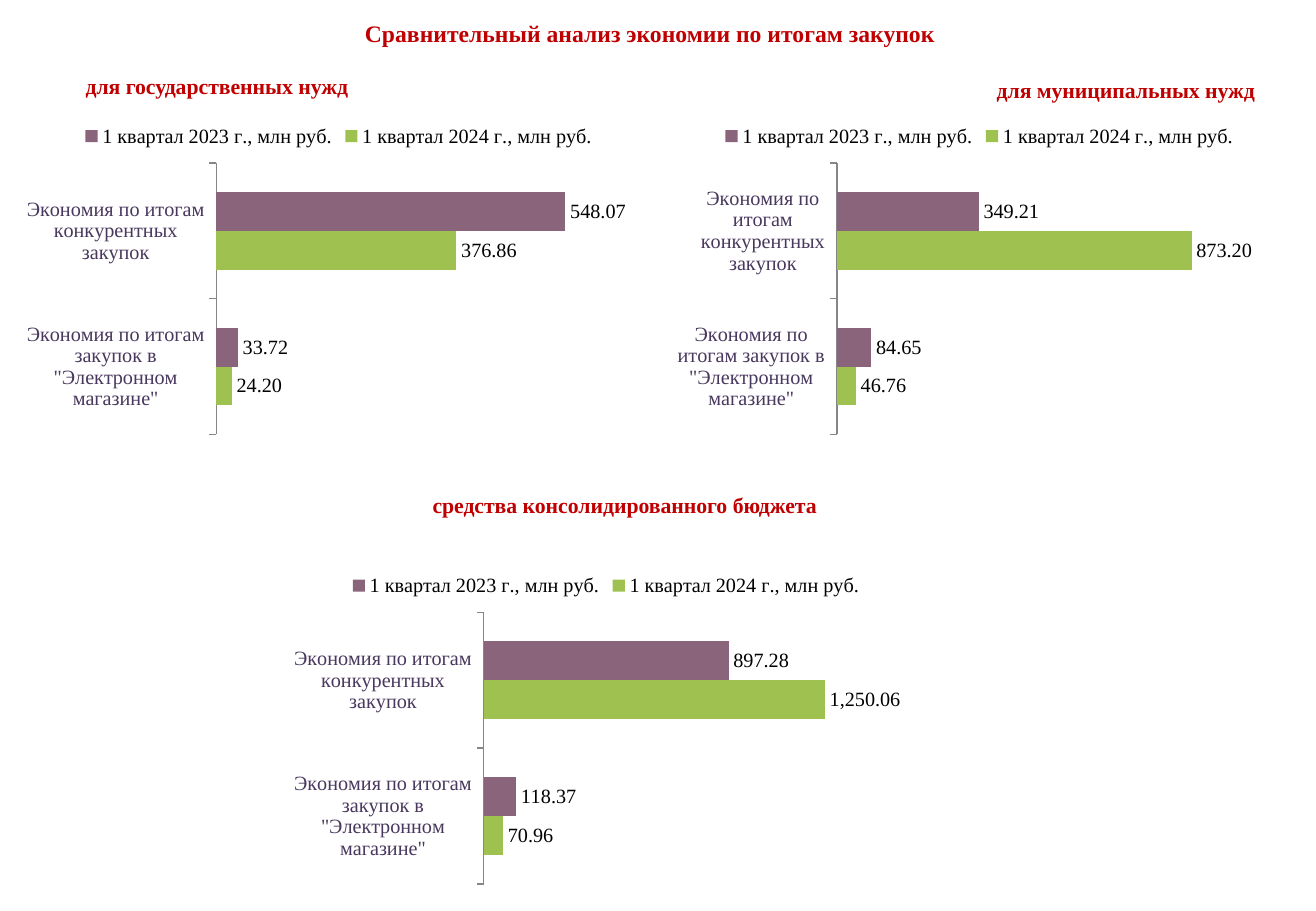
from pptx import Presentation
from pptx.chart.data import CategoryChartData
from pptx.dml.color import RGBColor
from pptx.enum.chart import (XL_CHART_TYPE, XL_LABEL_POSITION,
                             XL_LEGEND_POSITION, XL_TICK_MARK)
from pptx.enum.text import MSO_ANCHOR, PP_ALIGN
from pptx.oxml import parse_xml
from pptx.oxml.ns import nsdecls
from pptx.util import Pt

BAR = XL_CHART_TYPE.BAR_CLUSTERED
OUTSIDE_END = XL_LABEL_POSITION.OUTSIDE_END
LEGEND_TOP = XL_LEGEND_POSITION.TOP
TICK_OUT, TICK_NONE = XL_TICK_MARK.OUTSIDE, XL_TICK_MARK.NONE
CENTER, MIDDLE = PP_ALIGN.CENTER, MSO_ANCHOR.MIDDLE

PX = 9144  # 100 px to the inch
SLIDE = (1083, 750)
FONT = "Times New Roman"
RED, BLACK, VIOLET, GREY = "C00000", "000000", "49385E", "868686"
NUMBER_FORMAT = "#,##0.00"
CHART_SIZE = (512, 295)
PLOT_TOP, PLOT_HEIGHT = 0.143, 0.758

TITLE = ("Сравнительный анализ экономии по итогам закупок", (35, 3, 1000, 49))
CATEGORIES = ['Экономия по итогам закупок в "Электронном магазине"',
              "Экономия по итогам конкурентных закупок"]
SERIES = [("1 квартал 2024 г., млн руб.", "9EC14F"),
          ("1 квартал 2023 г., млн руб.", "8A647B")]
PANELS = [
    dict(heading="для государственных нужд", heading_box=(22, 56, 313, 30),
         chart_at=(22, 92), plot_x=(0.303, 0.616), axis_max=600,
         values=[(24.20, 376.86), (33.72, 548.07)]),
    dict(heading="для муниципальных нужд", heading_box=(770, 59, 313, 30),
         chart_at=(550, 92), plot_x=(0.271, 0.653), axis_max=1000,
         values=[(46.76, 873.20), (84.65, 349.21)]),
    dict(heading="средства консолидированного бюджета",
         heading_box=(258, 401, 512, 30),
         chart_at=(242, 462), plot_x=(0.303, 0.616), axis_max=1400,
         values=[(70.96, 1250.06), (118.37, 897.28)]),
]


def emu(lengths):
    return [n * PX for n in lengths]


def rgb(color):
    return RGBColor.from_string(color)


def style_font(font, size, color, bold=False):
    for name, value in dict(name=FONT, size=Pt(size), bold=bold).items():
        setattr(font, name, value)
    font.color.rgb = rgb(color)


def write_heading(shape, text, size):
    tf = shape.text_frame
    tf.word_wrap = True
    tf.vertical_anchor = MIDDLE
    p = tf.paragraphs[0]
    p.alignment = CENTER
    r = p.add_run()
    r.text = text
    style_font(r.font, size, RED, bold=True)


def place_plot(chart, x, w):
    """Fix the inner plot area as fractions of the chart."""
    fractions = dict(x=x, y=PLOT_TOP, w=w, h=PLOT_HEIGHT)
    parts = "".join(f'<c:{k}Mode val="edge"/>' for k in "xy")
    parts += "".join(f'<c:{k} val="{v}"/>' for k, v in fractions.items())
    layout = parse_xml(
        f'<c:layout {nsdecls("c")}><c:manualLayout>'
        f'<c:layoutTarget val="inner"/>{parts}</c:manualLayout></c:layout>')
    chart._chartSpace.chart.plotArea.insert(0, layout)


def add_savings_chart(s, panel):
    data = CategoryChartData(number_format=NUMBER_FORMAT)
    data.categories = CATEGORIES
    for (name, _), values in zip(SERIES, panel["values"]):
        data.add_series(name, values)
    box = emu(panel["chart_at"] + CHART_SIZE)
    chart = s.shapes.add_chart(BAR, *box, data).chart
    chart.has_title = False
    chart.font.name, chart.font.size = "Calibri", Pt(18)
    place_plot(chart, *panel["plot_x"])

    chart.has_legend = True
    legend = chart.legend
    legend.position, legend.include_in_layout = LEGEND_TOP, False
    style_font(legend.font, 12, BLACK)

    cat_axis, val_axis = chart.category_axis, chart.value_axis
    cat_axis.major_tick_mark, cat_axis.minor_tick_mark = TICK_OUT, TICK_NONE
    cat_axis.format.line.color.rgb = rgb(GREY)
    style_font(cat_axis.tick_labels.font, 12, VIOLET)
    val_axis.minimum_scale, val_axis.maximum_scale = 0, panel["axis_max"]
    val_axis.has_major_gridlines = False
    val_axis.visible = False

    plot = chart.plots[0]
    plot.gap_width, plot.overlap, plot.vary_by_categories = 150, 0, False
    for series, (_, color) in zip(plot.series, SERIES):
        series.format.fill.solid()
        series.format.fill.fore_color.rgb = rgb(color)
        labels = series.data_labels
        for name, value in dict(show_value=True, position=OUTSIDE_END,
                                number_format=NUMBER_FORMAT,
                                number_format_is_linked=False).items():
            setattr(labels, name, value)
        style_font(labels.font, 12, BLACK)


def main():
    prs = Presentation()
    prs.slide_width, prs.slide_height = emu(SLIDE)
    s = prs.slides.add_slide(prs.slide_layouts[5])
    text, box = TITLE
    title = s.shapes.title
    title.left, title.top, title.width, title.height = emu(box)
    write_heading(title, text, 14)
    for panel in PANELS:
        add_savings_chart(s, panel)
        heading = s.shapes.add_textbox(*emu(panel["heading_box"]))
        write_heading(heading, panel["heading"], 12.9)
    prs.save("out.pptx")


if __name__ == "__main__":
    main()
